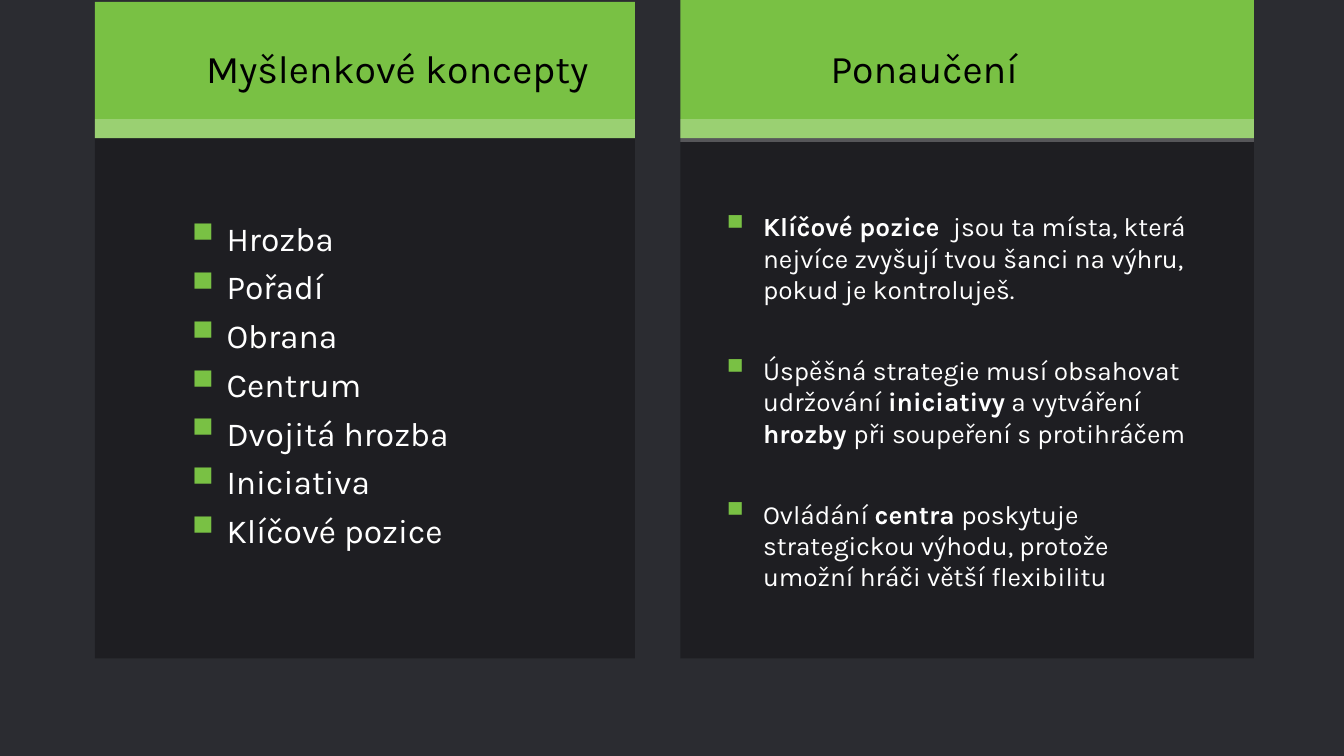
from lxml.etree import SubElement
from pptx import Presentation
from pptx.dml.color import RGBColor
from pptx.enum.shapes import MSO_SHAPE as Shape
from pptx.enum.text import PP_ALIGN as Align
from pptx.oxml.ns import qn
from pptx.util import Cm, Pt

FONT = "Karla"
GREEN, WHITE, BLACK, BACKGROUND = "79C144", "FFFFFF", "000000", "2B2C31"
INDENT = 1.07
PANEL_TOP, PANEL_HEIGHT, STRIP_TOP = 3.48, 13.11, 3.0

# left, width, header top, strip height (cm)
COLUMNS = [(2.39, 13.61, 0.05, 0.48), (17.15, 14.45, 0, 0.58)]

CONCEPTS_TITLE = "Myšlenkové koncepty"
LESSONS_TITLE = "Ponaučení"
CONCEPTS = ["Hrozba", "Pořadí", "Obrana", "Centrum", "Dvojitá hrozba",
            "Iniciativa", "Klíčové pozice"]
# Each lesson is a list of (text, bold)
LESSONS = [
    [("Klíčové pozice  ", True),
     ("jsou ta místa, která nejvíce zvyšují tvou šanci na výhru, "
      "pokud je kontroluješ.", False)],
    [("Úspěšná strategie musí obsahovat udržování ", False),
     ("iniciativy", True), (" a vytváření ", False),
     ("hrozby ", True), ("při soupeření s protihráčem", False)],
    [("Ovládání ", False), ("centra ", True),
     ("poskytuje strategickou výhodu, protože umožní hráči větší "
      "flexibilitu", False)],
]
LESSON_TOP, LESSON_STEP = 5.18, 3.62


def color(value):
    return RGBColor.from_string(value)


def add_block(page, left, top, width, height, fill, opacity=100):
    block = page.shapes.add_shape(
        Shape.RECTANGLE, Cm(left), Cm(top), Cm(width), Cm(height))
    block.shadow.inherit = False
    block.line.fill.background()
    block.fill.solid()
    block.fill.fore_color.rgb = color(fill)
    if opacity < 100:
        tint = block.fill._xPr.find(".//" + qn("a:srgbClr"))
        SubElement(tint, qn("a:alpha"), val=str(opacity * 1000))


def add_text(page, left, top, width, height):
    box = page.shapes.add_textbox(Cm(left), Cm(top), Cm(width), Cm(height))
    box.text_frame.word_wrap = True
    return box.text_frame


def add_spans(para, spans, size, ink):
    para.font.name, para.font.size = FONT, Pt(size)
    para.font.color.rgb = color(ink)
    for text, bold in spans:
        span = para.add_run()
        span.text, span.font.bold = text, bold


def add_bullet(para):
    """Give the paragraph a hanging green square."""
    props = para._p.get_or_add_pPr()
    props.set("marL", str(Cm(INDENT)))
    props.set("indent", str(-Cm(INDENT)))
    tint = SubElement(props, qn("a:buClr"))
    SubElement(tint, qn("a:srgbClr"), val=GREEN)
    SubElement(props, qn("a:buSzPct"), val="150000")
    SubElement(props, qn("a:buChar"), char="▪")
    defaults = props.find(qn("a:defRPr"))
    if defaults is not None:
        props.append(defaults)  # the schema wants it after the bullet


def add_title(page, text, *place):
    para = add_text(page, *place).paragraphs[0]
    para.alignment = Align.CENTER
    add_spans(para, [(text, False)], 28, BLACK)
    return para


def main():
    deck = Presentation()
    deck.slide_width, deck.slide_height = Cm(33.87), Cm(19.05)
    page = deck.slides.add_slide(deck.slide_layouts[6])
    page.background.fill.solid()
    page.background.fill.fore_color.rgb = color(BACKGROUND)

    for left, width, top, strip_height in COLUMNS:
        add_block(page, left, PANEL_TOP, width, PANEL_HEIGHT, BLACK, 30)
        add_block(page, left, top, width, PANEL_TOP - top, GREEN)
        add_block(page, left, STRIP_TOP, width, strip_height, WHITE, 25)

    add_title(page, CONCEPTS_TITLE, 3.48, 0.99, 13.06, 1.45)
    heading = add_title(page, LESSONS_TITLE, 18.08, 0.86, 10.72, 1.63)
    tail = heading.add_run()
    tail.text, tail.font.name, tail.font.size = " ", "Open Sans", Pt(32)

    frame = add_text(page, 4.39, 5.36, 7.37, 8.71)
    for number, concept in enumerate(CONCEPTS):
        para = frame.add_paragraph() if number else frame.paragraphs[0]
        para.space_before = Pt(6 if number else 0)
        add_spans(para, [(concept, False)], 24, WHITE)
        add_bullet(para)

    for number, lesson in enumerate(LESSONS):
        top = LESSON_TOP + number * LESSON_STEP
        para = add_text(page, 17.91, top, 12.73, 2.64).paragraphs[0]
        add_spans(para, lesson, 18.7, WHITE)
        add_bullet(para)

    deck.save("out.pptx")


if __name__ == "__main__":
    main()
